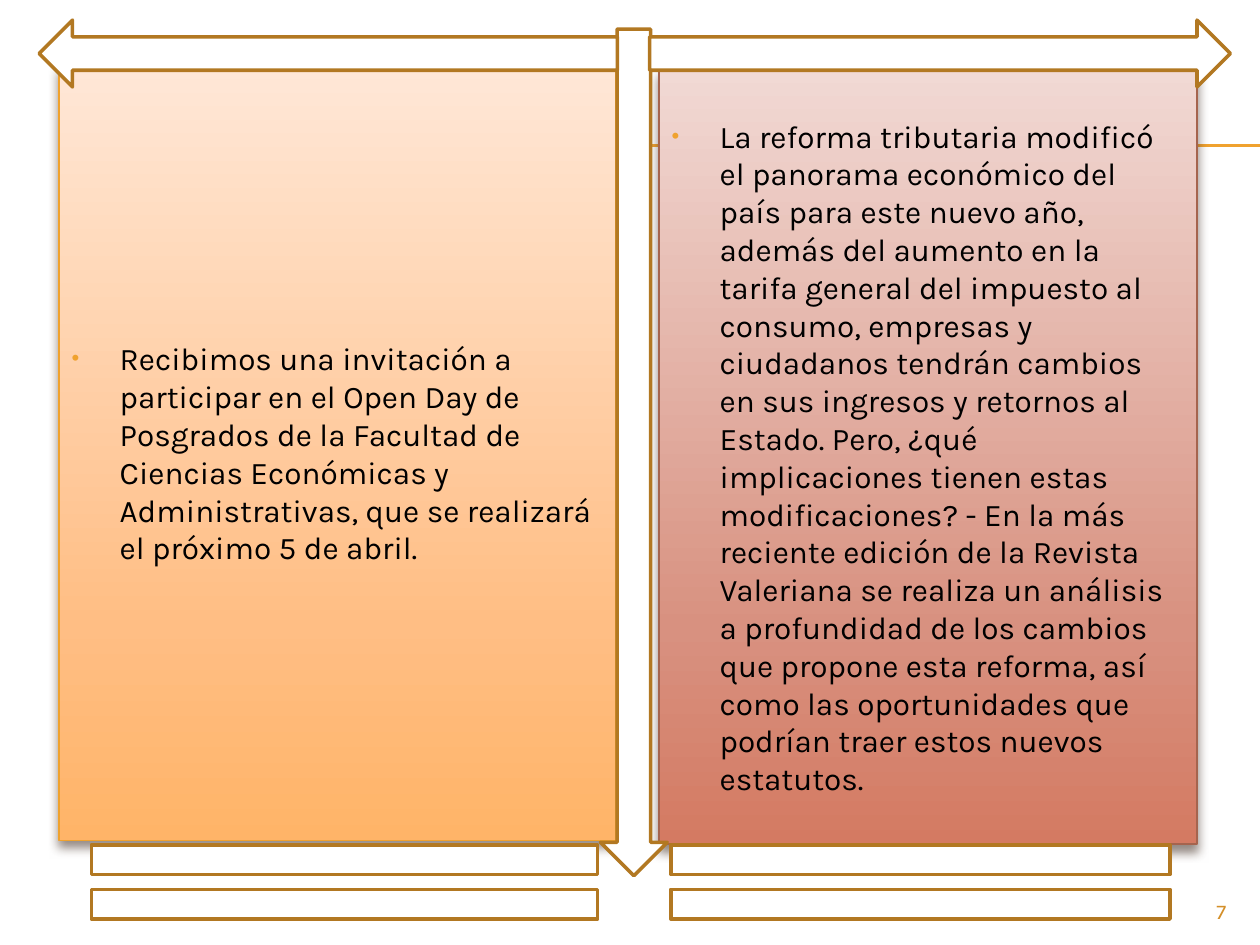
from lxml import etree
from pptx import Presentation
from pptx.dml.color import RGBColor
from pptx.enum import shapes, text
from pptx.oxml import ns
from pptx.util import Pt

COLORS = {"white": "FFFFFF", "black": "000000", "gold": "F0A22E", "outline": "B27822",
          "number": "D48F29", "rust": "A5644E", "shadow": "4E3B30"}
FONT = "Karla"

PANELS = [  # box, gradient stops, border, wording
    ((33.8, 37.4, 318.2, 442.8), [(0, "FFE7D7"), (72, "FFBE84"), (100, "FFB468")], "gold",
     "Recibimos una invitación a participar en el Open Day de Posgrados de la Facultad de "
     "Ciencias Económicas y Administrativas, que se realizará el próximo 5 de abril."),
    ((376.6, 39.6, 307.4, 442.8), [(0, "F1D9D4"), (72, "D89180"), (100, "D47A62")], "rust",
     "La reforma tributaria modificó el panorama económico del país para este nuevo año, "
     "además del aumento en la tarifa general del impuesto al consumo, empresas y ciudadanos "
     "tendrán cambios en sus ingresos y retornos al Estado. Pero, ¿qué implicaciones tienen "
     "estas modificaciones? - En la más reciente edición de la Revista Valeriana se realiza un "
     "análisis a profundidad de los cambios que propone esta reforma, así como las "
     "oportunidades que podrían traer estos nuevos estatutos."),
]
MSO = shapes.MSO_SHAPE
FRAME = [
    (MSO.DOWN_ARROW, (343.1, 16.6, 38.2, 483.8)),
    (MSO.RIGHT_ARROW, (371.2, 11.5, 331.9, 38.2)),
    (MSO.LEFT_ARROW, (22.3, 11.5, 330.5, 38.2)),
    (MSO.MATH_EQUAL, (0, 468, 393.8, 72)),
    (MSO.MATH_EQUAL, (331.9, 468, 388.1, 72)),
]
RULE_TOPS = (82.8, 83.5)


def rgb(name):
    return RGBColor.from_string(COLORS[name])


def points(box):
    return [Pt(v) for v in box]


def add_xml(parent, tag, **attrs):
    return etree.SubElement(parent, ns.qn(tag), attrs)


def set_line(shape, color, width):
    shape.line.color.rgb = rgb(color)
    shape.line.width = Pt(width)


def set_gradient(shape, stops):
    shape.fill.gradient()
    shape.fill.gradient_angle = 270
    stop_list = shape.element.spPr.find(".//" + ns.qn("a:gsLst"))
    for old in list(stop_list):
        stop_list.remove(old)
    for pos, color in stops:
        add_xml(add_xml(stop_list, "a:gs", pos=str(pos * 1000)), "a:srgbClr", val=color)


def set_shadow(shape):
    shape.shadow.inherit = False
    effects = shape.element.spPr.find(ns.qn("a:effectLst"))
    shadow = add_xml(effects, "a:outerShdw", blurRad=str(Pt(6)), dist=str(Pt(4)),
                     dir="5400000", rotWithShape="0")
    color = add_xml(shadow, "a:srgbClr", val=COLORS["shadow"])
    add_xml(color, "a:alpha", val="60000")


def set_bullet(p):
    pPr = p._p.get_or_add_pPr()
    pPr.set("marL", str(Pt(27.4)))
    pPr.set("indent", str(-Pt(27.4)))
    add_xml(add_xml(pPr, "a:buClr"), "a:srgbClr", val=COLORS["gold"])
    add_xml(pPr, "a:buSzPct", val="70000")
    add_xml(pPr, "a:buFont", typeface="Arial")
    add_xml(pPr, "a:buChar", char="•")


def write(p, wording, size, color):
    r = p.add_run()
    r.text = wording
    r.font.name, r.font.size, r.font.color.rgb = FONT, Pt(size), rgb(color)


def fill_panel(sp, box, stops, border, wording):
    sp.left, sp.top, sp.width, sp.height = points(box)
    set_gradient(sp, stops)
    set_line(sp, border, 0.79)
    set_shadow(sp)
    tf = sp.text_frame
    tf.word_wrap = True
    tf.auto_size = text.MSO_AUTO_SIZE.NONE
    tf.vertical_anchor = text.MSO_ANCHOR.MIDDLE
    p = tf.paragraphs[0]
    p.space_before = Pt(3.6)
    set_bullet(p)
    write(p, wording, 18, "black")


def main():
    prs = Presentation()
    prs.slide_width, prs.slide_height = Pt(720), Pt(540)
    s = prs.slides.add_slide(prs.slide_layouts[3])
    title = s.shapes.title.element
    title.getparent().remove(title)
    bodies = list(s.placeholders)

    for i, top in enumerate(RULE_TOPS):
        rule = s.shapes.add_connector(shapes.MSO_CONNECTOR.STRAIGHT,
                                      Pt(40.3), Pt(top), Pt(720), Pt(top))
        set_line(rule, "gold", 0.75)
        add_xml(rule.element.spPr, "a:effectLst")
        bodies[0].element.getparent().insert(2 + i, rule.element)  # behind the panels

    for body, panel in zip(bodies, PANELS):
        fill_panel(body, *panel)

    for kind, box in FRAME:
        sp = s.shapes.add_shape(kind, *points(box))
        sp.shadow.inherit = False
        sp.fill.solid()
        sp.fill.fore_color.rgb = rgb("white")
        set_line(sp, "outline", 2)

    number = s.shapes.add_textbox(*points((648, 509.8, 59.8, 19.4)))
    tf = number.text_frame
    tf.word_wrap = True
    p = tf.paragraphs[0]
    p.alignment = text.PP_ALIGN.RIGHT
    write(p, "7", 12, "number")
    prs.save("out.pptx")


if __name__ == "__main__":
    main()
